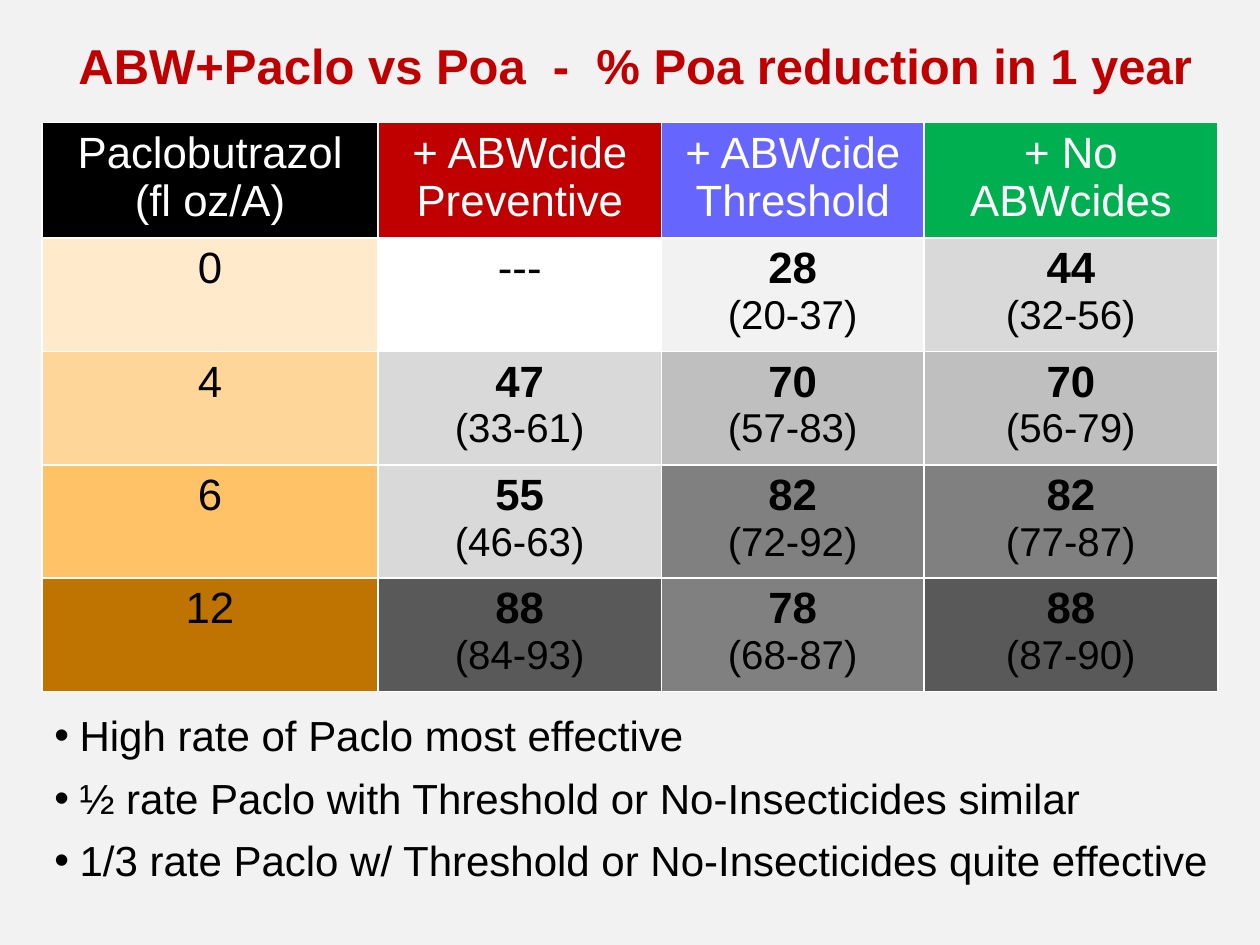
"""Build a slide on Poa reduction by paclobutrazol rate and ABWcide programme."""
from lxml.etree import SubElement
from pptx import Presentation
from pptx.dml.color import RGBColor
from pptx.enum.text import MSO_ANCHOR, PP_ALIGN
from pptx.oxml.ns import qn
from pptx.util import Pt

FONT = "Arial"
BACKGROUND = RGBColor(0xF2, 0xF2, 0xF2)
BLACK = RGBColor(0x00, 0x00, 0x00)
WHITE = RGBColor(0xFF, 0xFF, 0xFF)
RED = RGBColor(0xC0, 0x00, 0x00)
BLUE = RGBColor(0x66, 0x66, 0xFF)
GREEN = RGBColor(0x00, 0xB0, 0x50)
ORANGES = [RGBColor(0xFF, 0xEB, 0xCC), RGBColor(0xFF, 0xD6, 0x99),
           RGBColor(0xFF, 0xC2, 0x66), RGBColor(0xBF, 0x73, 0x00)]
PALE = RGBColor(0xF2, 0xF2, 0xF2)
LIGHT = RGBColor(0xD9, 0xD9, 0xD9)
SILVER = RGBColor(0xBF, 0xBF, 0xBF)
GREY = RGBColor(0x80, 0x80, 0x80)
DARK = RGBColor(0x59, 0x59, 0x59)

TITLE = "ABW+Paclo vs Poa  -  % Poa reduction in 1 year"
HEADERS = [
    (["Paclobutrazol", "(fl oz/A)"], BLACK),
    (["+ ABWcide", "Preventive"], RED),
    (["+ ABWcide", "Threshold"], BLUE),
    (["+ No", "ABWcides"], GREEN),
]
RATES = ["0", "4", "6", "12"]
REDUCTIONS = [
    [(["---"], WHITE), (["28", "(20-37)"], PALE), (["44", "(32-56)"], LIGHT)],
    [(["47", "(33-61)"], LIGHT), (["70", "(57-83)"], SILVER), (["70", "(56-79)"], SILVER)],
    [(["55", "(46-63)"], LIGHT), (["82", "(72-92)"], GREY), (["82", "(77-87)"], GREY)],
    [(["88", "(84-93)"], DARK), (["78", "(68-87)"], GREY), (["88", "(87-90)"], DARK)],
]
BULLETS = [
    "High rate of Paclo most effective",
    "½ rate Paclo with Threshold or No-Insecticides similar",
    "1/3 rate Paclo w/ Threshold or No-Insecticides quite effective",
]
COLUMN_WIDTHS = [192, 162, 150, 168]
ROW_HEIGHTS = [66] + [64.8] * len(RATES)


def style_font(paragraph, size, color, bold=False):
    font = paragraph.font
    font.name, font.size, font.bold = FONT, Pt(size), bold
    font.color.rgb = color


def add_paragraphs(frame, lines):
    for index, line in enumerate(lines):
        paragraph = frame.paragraphs[0] if index == 0 else frame.add_paragraph()
        paragraph.text = line
        yield paragraph


def add_borders(cell):
    properties = cell._tc.get_or_add_tcPr()
    for side in ("lnL", "lnR", "lnT", "lnB"):
        line = SubElement(properties, qn(f"a:{side}"), w=str(Pt(1)))
        fill = SubElement(line, qn("a:solidFill"))
        SubElement(fill, qn("a:srgbClr"), val=str(WHITE))


def fill_cell(cell, lines, fill, color, is_result):
    add_borders(cell)
    cell.fill.solid()
    cell.fill.fore_color.rgb = fill
    for index, paragraph in enumerate(add_paragraphs(cell.text_frame, lines)):
        paragraph.alignment = PP_ALIGN.CENTER
        is_range = is_result and index == 1
        is_mean = is_result and index == 0 and len(lines) == 2
        style_font(paragraph, 23 if is_range else 25, color, is_mean)


def add_title(slide):
    title = slide.shapes.title
    title.left, title.top, title.width, title.height = Pt(12), Pt(16.5), Pt(702), Pt(41)
    title.text_frame.vertical_anchor = MSO_ANCHOR.MIDDLE
    for paragraph in add_paragraphs(title.text_frame, [TITLE]):
        paragraph.alignment = PP_ALIGN.CENTER
        style_font(paragraph, 28, RED, True)


def add_results(slide):
    table = slide.shapes.add_table(
        len(ROW_HEIGHTS), len(COLUMN_WIDTHS), Pt(24), Pt(70),
        Pt(sum(COLUMN_WIDTHS)), Pt(sum(ROW_HEIGHTS))).table
    for column, width in zip(table.columns, COLUMN_WIDTHS):
        column.width = Pt(width)
    for row, height in zip(table.rows, ROW_HEIGHTS):
        row.height = Pt(height)
    body = [[([rate], orange)] + results
            for rate, orange, results in zip(RATES, ORANGES, REDUCTIONS)]
    for row_index, entries in enumerate([HEADERS] + body):
        for column_index, (lines, fill) in enumerate(entries):
            fill_cell(table.cell(row_index, column_index), lines, fill,
                      BLACK if row_index else WHITE, row_index > 0)


def add_bullets(slide):
    frame = slide.shapes.add_textbox(Pt(24), Pt(402), Pt(684), Pt(114)).text_frame
    frame.word_wrap = True
    for paragraph in add_paragraphs(frame, BULLETS):
        properties = paragraph._p.get_or_add_pPr()
        properties.set("marL", str(Pt(14.4)))
        properties.set("indent", str(-Pt(14.4)))
        paragraph.space_after = Pt(7)
        SubElement(properties, qn("a:buFont"), typeface=FONT)
        SubElement(properties, qn("a:buChar"), char="•")
        style_font(paragraph, 24, BLACK)


def main():
    presentation = Presentation()
    presentation.slide_width, presentation.slide_height = Pt(720), Pt(540)
    slide = presentation.slides.add_slide(presentation.slide_layouts[5])
    slide.background.fill.solid()
    slide.background.fill.fore_color.rgb = BACKGROUND
    add_title(slide)
    add_results(slide)
    add_bullets(slide)
    presentation.save("out.pptx")


if __name__ == "__main__":
    main()
